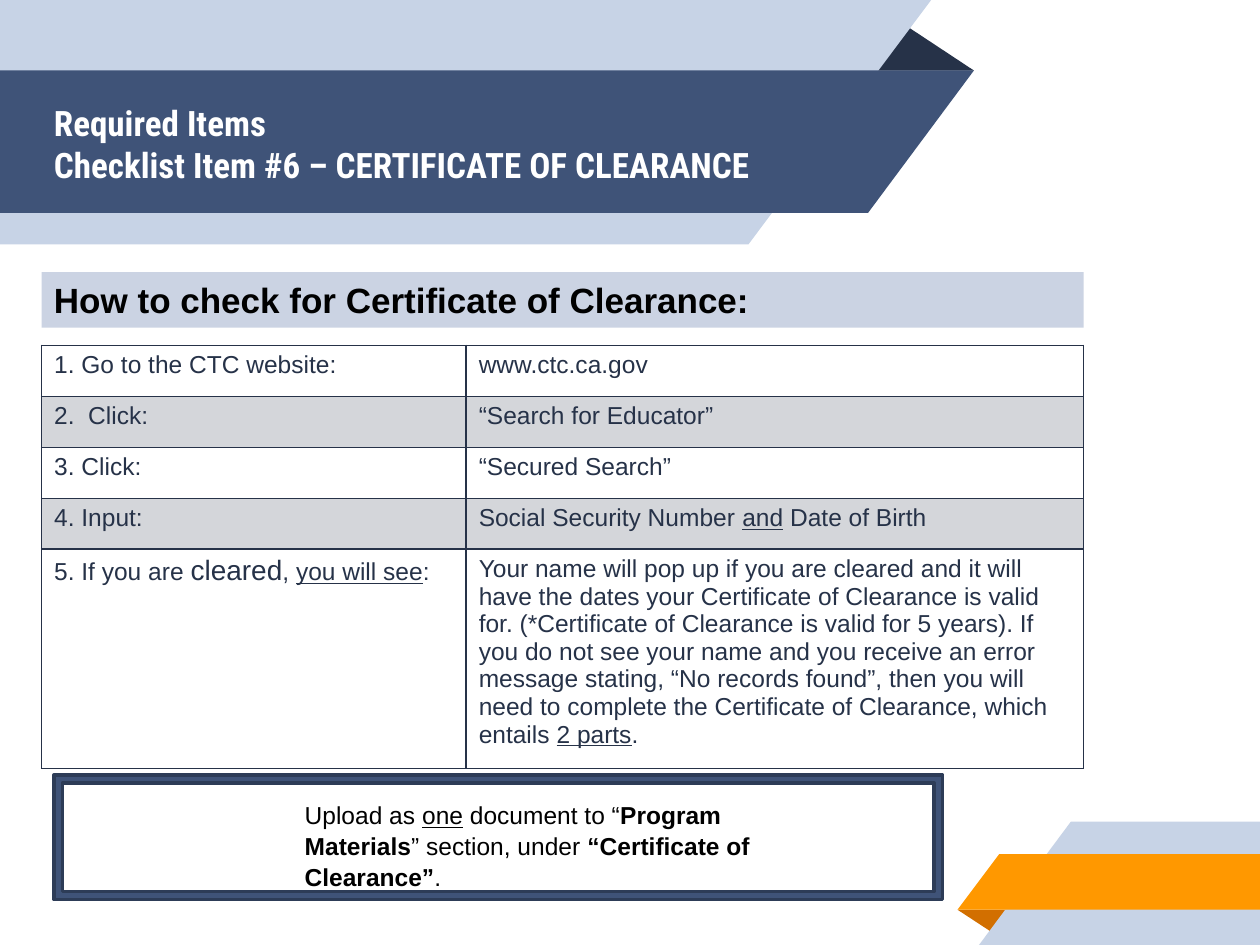
import pptx
import pptx.dml.color
import pptx.enum.shapes
import pptx.enum.text
import pptx.oxml
import pptx.oxml.ns
import pptx.util
from dataclasses import dataclass

# The slide is a grid of 100 columns by 75 rows of square units.
COLUMNS, ROWS = 100, 75
UNIT = pptx.util.Inches(0.1)


@dataclass(frozen=True)
class Theme:
    pale: str = "C7D3E6"
    navy: str = "3F5378"
    ink: str = "263248"
    outline: str = "2D3C57"
    orange: str = "FF9800"
    rust: str = "D26F00"
    heading_bar: str = "CBD3E3"
    stripe: str = "D4D6DA"
    white: str = "FFFFFF"
    black: str = "000000"
    body_font: str = "Arial"
    title_font: str = "Roboto Condensed"
    heading_size: int = 20
    large_size: int = 16
    body_size: int = 14


THEME = Theme()
UNDERLINE = {"underline": True}
BOLD = {"bold": True}

# Fill and corner points (column, row), from back to front.
RIBBONS = [
    (THEME.ink, [(68.8, 5.6), (71.55, 1.8), (77.3, 5.6)]),
    (THEME.pale, [(0, 0), (73.9, 0), (59.4, 19.4), (0, 19.4)]),
    (THEME.navy, [(0, 5.6), (77.3, 5.6), (68.9, 16.9), (0, 16.9)]),
    (THEME.rust, [(76, 72.2), (80.3, 72.2), (78.9, 74.1)]),
    (THEME.pale, [(85, 65.2), (COLUMNS, 65.2), (COLUMNS, ROWS), (77.7, ROWS)]),
    (THEME.orange, [(79.3, 67.8), (COLUMNS, 67.8), (COLUMNS, 72.2), (76, 72.2)]),
]

STEPS = [
    ([("1. Go to the CTC website:", {})], [("www.ctc.ca.gov", {})]),
    ([("2.  Click:", {})], [("“Search for Educator”", {})]),
    ([("3. Click:", {})], [("“Secured Search”", {})]),
    ([("4. Input:", {})],
     [("Social Security Number ", {}), ("and", UNDERLINE), (" Date of Birth", {})]),
    ([("5. If you are ", {}),
      ("cleared", {"size": pptx.util.Pt(THEME.large_size)}),
      (", ", {}), ("you will see", UNDERLINE), (":", {})],
     [("Your name will pop up if you are cleared and it will have the dates your "
       "Certificate of Clearance is valid for. (*Certificate of Clearance is valid "
       "for 5 years). If you do not see your name and you receive an error message "
       "stating, “No records found”, then you will need to complete the Certificate "
       "of Clearance, which entails ", {}),
      ("2 parts", UNDERLINE), (".", {})]),
]

UPLOAD_NOTE = [
    ("Upload as ", {}), ("one", UNDERLINE), (" document to “", {}),
    ("Program Materials", BOLD), ("” section, under ", {}),
    ("“Certificate of Clearance”", BOLD), (".", {}),
]


def units(*counts):
    return [round(count * UNIT) for count in counts]


def rgb(color):
    return pptx.dml.color.RGBColor.from_string(color)


def paint(shape, fill, line=None, line_width=2):
    shape.shadow.inherit = False
    shape.fill.solid()
    shape.fill.fore_color.rgb = rgb(fill)
    if line:
        shape.line.color.rgb = rgb(line)
        shape.line.width = pptx.util.Pt(line_width)
    else:
        shape.line.fill.background()


def set_attributes(target, values):
    for key, value in values.items():
        setattr(target, key, value)


def write_runs(paragraph, pieces, color, size=THEME.body_size, **base):
    """Add (text, format) pieces, each format laid over the shared one."""
    shared = {"name": THEME.body_font, "size": pptx.util.Pt(size), **base}
    paragraph.alignment = pptx.enum.text.PP_ALIGN.LEFT
    for text, own in pieces:
        run = paragraph.add_run()
        run.text = text
        set_attributes(run.font, {**shared, **own})
        run.font.color.rgb = rgb(color)


def add_ribbon(slide, fill, corners):
    start, *others = [tuple(units(*corner)) for corner in corners]
    builder = slide.shapes.build_freeform(*start)
    builder.add_line_segments(others, close=True)
    paint(builder.convert_to_shape(), fill)


def add_text(slide, box, lines, color, anchor="TOP", fill=None, spacing=1.0, **font):
    label = slide.shapes.add_textbox(*units(*box))
    if fill:
        paint(label, fill)
    frame = label.text_frame
    set_attributes(frame, {
        "word_wrap": True,
        "vertical_anchor": pptx.enum.text.MSO_ANCHOR[anchor],
    })
    for index, pieces in enumerate(lines):
        paragraph = frame.add_paragraph() if index else frame.paragraphs[0]
        paragraph.line_spacing = spacing
        write_runs(paragraph, pieces, color, **font)


def add_frame(slide, box):
    border = slide.shapes.add_shape(
        pptx.enum.shapes.MSO_SHAPE.FRAME, *units(*box))
    border.adjustments[0] = 0.066
    paint(border, THEME.navy, THEME.outline)


def outline_cell(cell):
    properties = cell._tc.get_or_add_tcPr()
    for side in ("lnL", "lnR", "lnT", "lnB"):
        properties.append(pptx.oxml.parse_xml(
            f'<a:{side} {pptx.oxml.ns.nsdecls("a")} w="{pptx.util.Pt(1)}">'
            f'<a:solidFill><a:srgbClr val="{THEME.ink}"/></a:solidFill></a:{side}>'))


def add_steps(slide, left, top, widths, heights):
    table = slide.shapes.add_table(
        len(heights), len(widths),
        *units(left, top, sum(widths), sum(heights))).table
    set_attributes(table, {"first_row": False, "horz_banding": False})
    for column, width in zip(table.columns, units(*widths)):
        column.width = width
    for row, height in zip(table.rows, units(*heights)):
        row.height = height
    for row_index, step in enumerate(STEPS):
        for column_index, pieces in enumerate(step):
            cell = table.cell(row_index, column_index)
            outline_cell(cell)
            if row_index % 2:
                cell.fill.solid()
                cell.fill.fore_color.rgb = rgb(THEME.stripe)
            else:
                cell.fill.background()
            write_runs(cell.text_frame.paragraphs[0], pieces, THEME.ink)


def main():
    deck = pptx.Presentation()
    deck.slide_width, deck.slide_height = units(COLUMNS, ROWS)
    slide = deck.slides.add_slide(deck.slide_layouts[6])

    for fill, corners in RIBBONS:
        add_ribbon(slide, fill, corners)
    add_text(slide, (3.3, 5.8, 68.3, 11.2),
             [[("Required Items", {})],
              [("Checklist Item #6 – CERTIFICATE OF CLEARANCE", {})]],
             THEME.white, anchor="MIDDLE", size=THEME.heading_size,
             name=THEME.title_font, bold=True)
    add_text(slide, (23.2, 62.9, 41.7, 10.4), [UPLOAD_NOTE], THEME.black,
             spacing=1.05)
    add_frame(slide, (4.3, 61.5, 70.5, 9.9))
    add_text(slide, (3.3, 21.6, 82.7, 4.4),
             [[("How to check for Certificate of Clearance:", {})]],
             THEME.black, fill=THEME.heading_bar, size=THEME.heading_size, bold=True)
    add_steps(slide, 3.3, 27.4, widths=[33.7, 49], heights=[4.05] * 4 + [17.4])

    deck.save("out.pptx")


if __name__ == "__main__":
    main()
